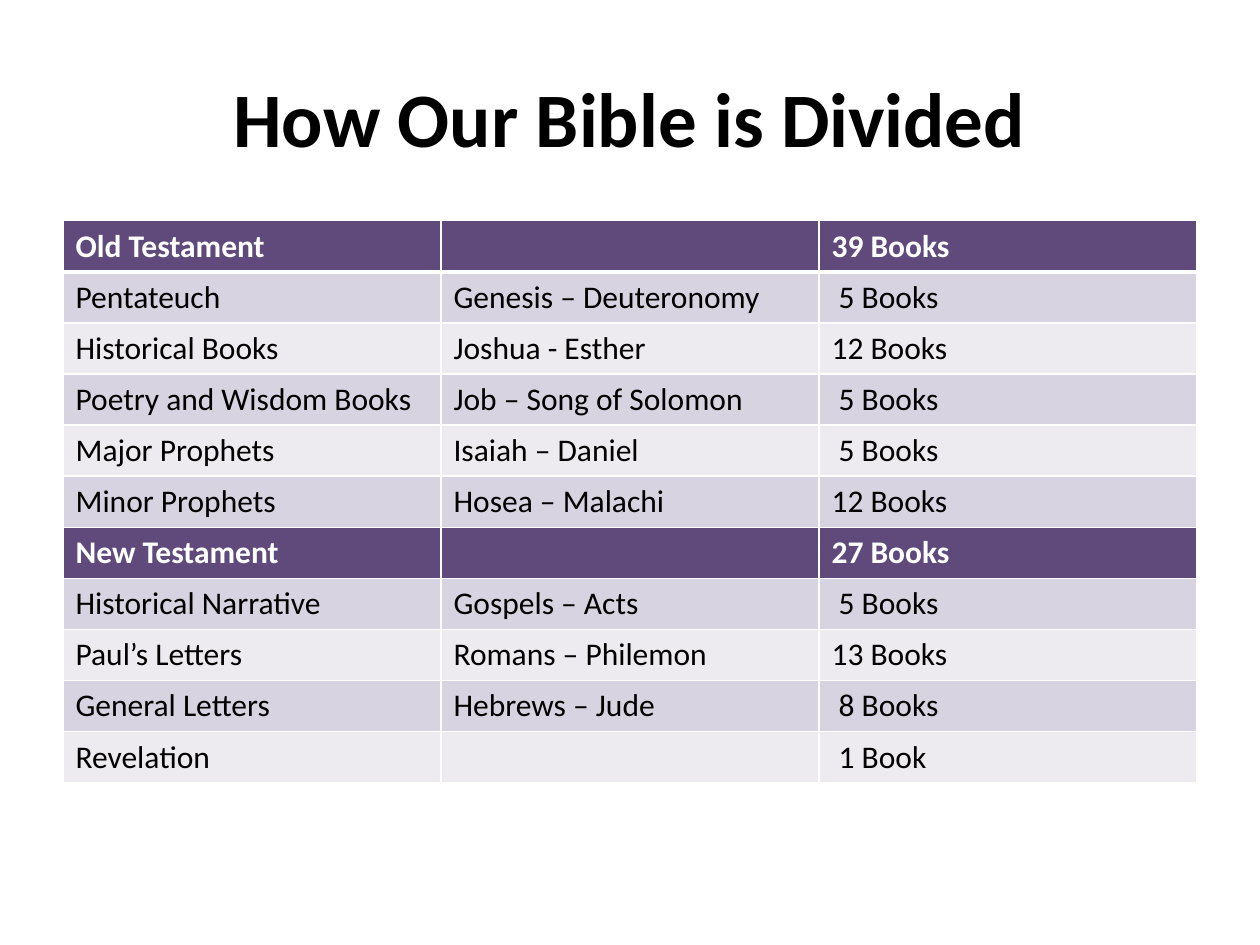
from lxml import etree
from pptx import Presentation
from pptx import util as u
from pptx.dml.color import RGBColor
from pptx.enum import text
from pptx.oxml import ns

FONT = "Calibri"
WHITE, BLACK, PURPLE = "FFFFFF", "000000", "604A7B"
BANDS = ("EDEAF0", "D8D3E0")
TESTAMENTS = [
    (("Old Testament", "", "39 Books"), [
        ("Pentateuch", "Genesis – Deuteronomy", " 5 Books"),
        ("Historical Books", "Joshua - Esther", "12 Books"),
        ("Poetry and Wisdom Books", "Job – Song of Solomon", " 5 Books"),
        ("Major Prophets", "Isaiah – Daniel", " 5 Books"),
        ("Minor Prophets", "Hosea – Malachi", "12 Books"),
    ]),
    (("New Testament", "", "27 Books"), [
        ("Historical Narrative", "Gospels – Acts", " 5 Books"),
        ("Paul’s Letters", "Romans – Philemon", "13 Books"),
        ("General Letters", "Hebrews – Jude", " 8 Books"),
        ("Revelation", "", " 1 Book"),
    ]),
]


def color(value):
    """Turn a hex string into a colour."""
    return RGBColor.from_string(value)


def style_text(frame, size, value, bold):
    """Format every run of a text frame."""
    for para in frame.paragraphs:
        for span in para.runs:
            span.font.name = FONT
            span.font.size = u.Pt(size)
            span.font.bold = bold
            span.font.color.rgb = color(value)


def set_borders(cell, top, bottom):
    """Draw white borders with the given top and bottom widths in points."""
    properties = cell._tc.get_or_add_tcPr()
    for side, width in (("L", 1), ("R", 1), ("T", top), ("B", bottom)):
        line = etree.SubElement(properties, ns.qn(f"a:ln{side}"), w=str(u.Pt(width)))
        fill = etree.SubElement(line, ns.qn("a:solidFill"))
        etree.SubElement(fill, ns.qn("a:srgbClr"), val=WHITE)


def add_title(page, left, top, width, height):
    """Place the centred heading in its box."""
    box = page.shapes.add_textbox(left, top, width, height)
    frame = box.text_frame
    frame.word_wrap = True
    frame.vertical_anchor = text.MSO_ANCHOR.MIDDLE
    frame.text = "How Our Bible is Divided"
    frame.paragraphs[0].alignment = text.PP_ALIGN.CENTER
    style_text(frame, 44, BLACK, True)


def add_books_table(page, left, top, width, height):
    """Place the table of testaments and their groups of books."""
    rows = []
    for heading, groups in TESTAMENTS:
        rows.append((heading, PURPLE, WHITE, True))
        for number, group in enumerate(groups, 1):
            rows.append((group, BANDS[number % 2], BLACK, False))
    table = page.shapes.add_table(len(rows), 3, left, top, width, height).table
    for row, (values, fill, ink, bold) in enumerate(rows):
        for column, value in enumerate(values):
            cell = table.cell(row, column)
            set_borders(cell, 3 if row == 1 else 1, 3 if row == 0 else 1)
            cell.fill.solid()
            cell.fill.fore_color.rgb = color(fill)
            cell.text_frame.text = value
            style_text(cell.text_frame, 18, ink, bold)


def main():
    """Build the slide and save it."""
    deck = Presentation()
    deck.slide_width, deck.slide_height = u.Cm(25.4), u.Cm(19.05)
    page = deck.slides.add_slide(deck.slide_layouts[6])
    left, width = u.Cm(1.27), u.Cm(22.86)
    add_title(page, left, u.Cm(0.76), width, u.Cm(3.18))
    add_books_table(page, left, u.Cm(4.45), width, u.Cm(11.33))
    deck.save("out.pptx")


if __name__ == "__main__":
    main()
